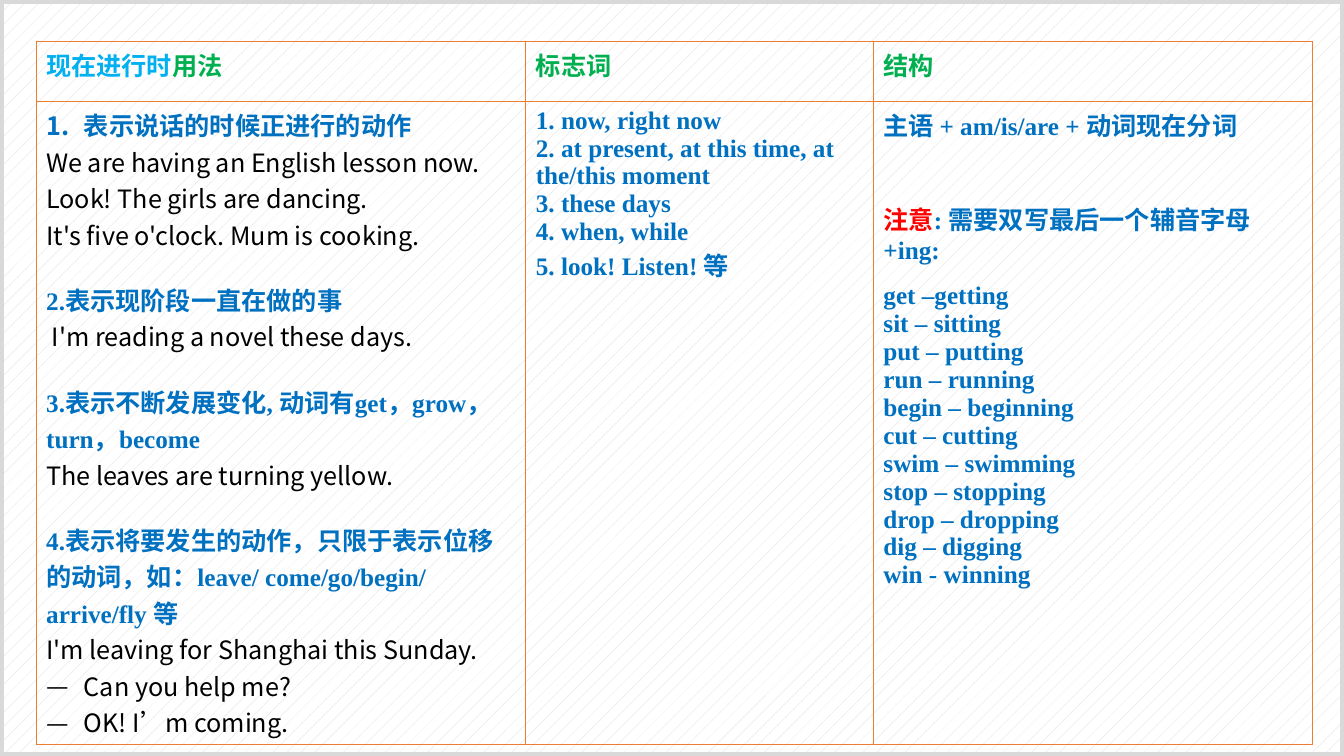
from lxml.etree import SubElement
from pptx import Presentation
from pptx.dml.color import RGBColor
from pptx.enum.dml import MSO_PATTERN_TYPE as Pattern
from pptx.enum.shapes import MSO_SHAPE as Shape
from pptx.enum.text import PP_ALIGN as Align
from pptx.oxml.ns import qn
from pptx.util import Cm, Pt

WHITE = RGBColor(0xFF, 0xFF, 0xFF)
GREY = RGBColor(0xD9, 0xD9, 0xD9)
BLACK = RGBColor(0, 0, 0)
RED = RGBColor(0xFF, 0, 0)
GREEN = RGBColor(0, 0xB0, 0x50)
SKY = RGBColor(0, 0xB0, 0xF0)
BLUE = RGBColor(0, 0x70, 0xC0)
ORANGE = RGBColor(0xED, 0x7D, 0x31)
SANS = "Noto Sans CJK SC"
SERIF = "Times New Roman"


def add_text(p, text, color=BLUE, font=SERIF, bold=True, size=18):
    for i, line in enumerate(text.split("\n")):
        if i:
            p.add_line_break()
        r = p.add_run()
        r.text = line
        r.font.size = Pt(size)
        r.font.name = font
        r.font.bold = bold
        r.font.color.rgb = color
        SubElement(r.font._element, qn("a:ea"), typeface=SANS)


class GrammarSlide:
    def __init__(self, prs):
        self.slide = prs.slides.add_slide(prs.slide_layouts[6])
        fill = self.slide.background.fill
        fill.patterned()
        fill.pattern = Pattern.PERCENT_5
        fill.fore_color.rgb = GREY
        fill.back_color.rgb = WHITE

    def frame(self, width, height):
        sp = self.slide.shapes.add_shape(Shape.RECTANGLE, 0, 0, width, height)
        sp.shadow.inherit = False
        sp.fill.background()
        sp.line.color.rgb = GREY
        sp.line.width = Pt(6)

    def table(self, left, top, widths, heights):
        gf = self.slide.shapes.add_table(
            len(heights), len(widths), left, top, sum(widths), sum(heights))
        table = gf.table
        table.first_row = table.horz_banding = False
        for column, width in zip(table.columns, widths):
            column.width = width
        for row, height in zip(table.rows, heights):
            row.height = height
        for cell in table.iter_cells():
            self.border(cell)
            cell.fill.background()
        return table

    def border(self, cell):
        tc_pr = cell._tc.get_or_add_tcPr()
        for side in ("lnL", "lnR", "lnT", "lnB"):
            ln = SubElement(tc_pr, qn(f"a:{side}"), w=str(Pt(1)))
            fill = SubElement(ln, qn("a:solidFill"))
            SubElement(fill, qn("a:srgbClr"), val=str(ORANGE))

    def paragraphs(self, cell, items):
        tf = cell.text_frame
        for i, (runs, options) in enumerate(items):
            p = tf.add_paragraph() if i else tf.paragraphs[0]
            self.format(p, **options)
            for text, style in runs:
                add_text(p, text, **style)

    def format(self, p, gap=0, bullet=None, align=None):
        p.alignment = align
        p.space_before = Pt(gap)
        if bullet:
            p_pr = p._p.get_or_add_pPr()
            p_pr.set("marL", str(Cm(0.95)))
            p_pr.set("indent", str(-Cm(0.95)))
            SubElement(p_pr, qn("a:buFont"), typeface=SANS)
            if bullet == "1.":
                SubElement(p_pr, qn("a:buAutoNum"), type="arabicPeriod")
            else:
                SubElement(p_pr, qn("a:buChar"), char=bullet)


def rule(text, **options):
    return [(text, {})], options


def example(text, **options):
    return [(text, {"color": BLACK, "font": SANS, "bold": False})], options


HEADINGS = [
    [("现在进行时", SKY), ("用法", GREEN)],
    [("标志词", GREEN)],
    [("结构", GREEN)],
]
DASH = {"bullet": "—", "align": Align.JUSTIFY}
USAGE = [
    rule("表示说话的时候正进行的动作", bullet="1."),
    example("We are having an English lesson now.\n"
            "Look! The girls are dancing.\n"
            "It's five o'clock. Mum is cooking."),
    rule("2.表示现阶段一直在做的事", gap=20.5),
    example(" I'm reading a novel these days."),
    rule("3.表示不断发展变化, 动词有get，grow，turn，become", gap=20.5),
    example("The leaves are turning yellow."),
    rule("4.表示将要发生的动作，只限于表示位移的动词，如："
         "leave/ come/go/begin/ arrive/fly 等", gap=20.5),
    example("I'm leaving for Shanghai this Sunday."),
    example("Can you help me?", **DASH),
    example("OK! I’m coming.", **DASH),
]
SIGNALS = [rule("1. now, right now\n"
                "2. at present, at this time, at the/this moment\n"
                "3. these days\n4. when, while\n5. look! Listen! 等")]
DOUBLED = ["get –getting", "sit – sitting", "put – putting", "run – running",
           "begin – beginning", "cut – cutting", "swim – swimming",
           "stop – stopping", "drop – dropping", "dig – digging",
           "win - winning"]
STRUCTURE = [
    rule("主语 + am/is/are + 动词现在分词"),
    ([("注意", {"color": RED}), (": 需要双写最后一个辅音字母+ing:", {})],
     {"gap": 41}),
    *[rule(pair, gap=0 if i else 12.5) for i, pair in enumerate(DOUBLED)],
]


def main():
    prs = Presentation()
    prs.slide_width, prs.slide_height = Cm(33.87), Cm(19.05)
    s = GrammarSlide(prs)
    s.frame(prs.slide_width, prs.slide_height)
    table = s.table(Cm(0.91), Cm(1.04), [Cm(12.34), Cm(8.76), Cm(11.07)],
                    [Cm(1.52), Cm(13.97)])
    for col, (heading, body) in enumerate(
            zip(HEADINGS, [USAGE, SIGNALS, STRUCTURE])):
        runs = [(text, {"color": color, "font": SANS})
                for text, color in heading]
        s.paragraphs(table.cell(0, col), [(runs, {})])
        s.paragraphs(table.cell(1, col), body)
    prs.save("out.pptx")


if __name__ == "__main__":
    main()
